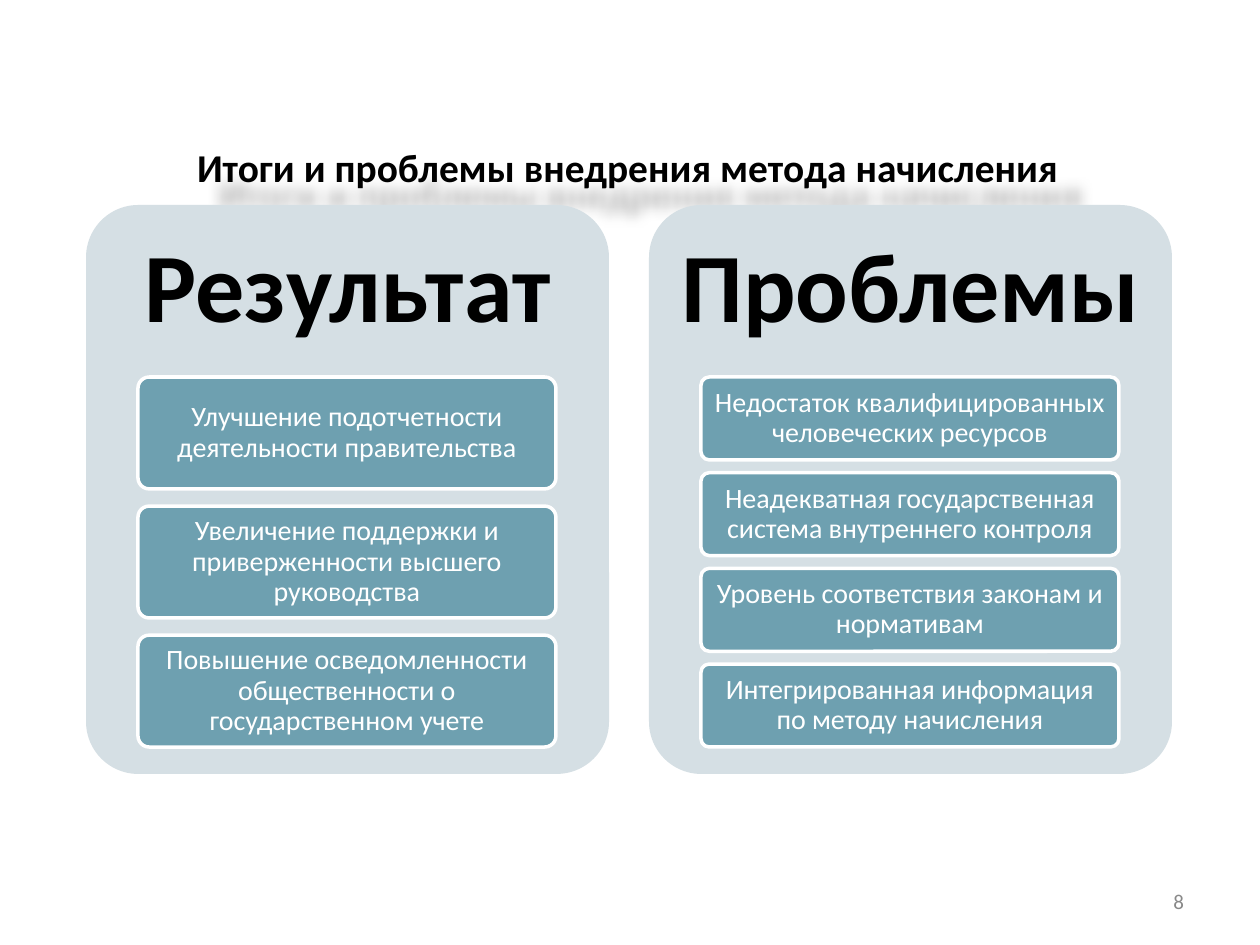
from lxml import etree
from pptx import Presentation
from pptx.dml.color import RGBColor
from pptx.enum.shapes import MSO_SHAPE
from pptx.enum.text import MSO_ANCHOR, MSO_AUTO_SIZE, PP_ALIGN
from pptx.oxml.ns import qn
from pptx.util import Emu, Pt

ROUNDED = MSO_SHAPE.ROUNDED_RECTANGLE
MIDDLE = MSO_ANCHOR.MIDDLE
CENTER, RIGHT = PP_ALIGN.CENTER, PP_ALIGN.RIGHT
NO_FIT = MSO_AUTO_SIZE.NONE

PX_PER_INCH = 126
FONT = "Calibri"
BLACK, WHITE, GREY = "000000", "FFFFFF", "898989"
PANEL_FILL, CARD_FILL = "D5DFE4", "6EA0B0"

PANEL_LEFT, PANEL_TOP, PANEL_WIDTH, PANEL_HEIGHT = 86, 205, 523, 569
PANEL_PITCH = 563
HEADING_HEIGHT, HEADING_INSET = 171, 15
CARD_INDENT, CARDS_TOP, CARD_WIDTH, CARDS_HEIGHT = 52, 377, 418, 370
GAP_RATIO = 2 / 13

TITLE = "Итоги и проблемы внедрения метода начисления"
PANELS = [
    ("Результат", [
        "Улучшение подотчетности деятельности правительства",
        "Увеличение поддержки и приверженности высшего руководства",
        "Повышение осведомленности общественности о государственном учете",
    ]),
    ("Проблемы", [
        "Недостаток квалифицированных человеческих ресурсов",
        "Неадекватная государственная система внутреннего контроля",
        "Уровень соответствия законам и нормативам",
        "Интегрированная информация по методу начисления",
    ]),
]


def px(length):
    return Emu(round(length * 914400 / PX_PER_INCH))


def rgb(hex_color):
    return RGBColor.from_string(hex_color)


def write(shape, text, size, color, bold=False, align=CENTER,
          insets=(9, 5, 9, 5), spacing=1.0):
    """Set one formatted paragraph; insets are left, top, right, bottom."""
    frame = shape.text_frame
    frame.text = text
    frame_format = {"word_wrap": True, "auto_size": NO_FIT,
                    "vertical_anchor": MIDDLE}
    for side, inset in zip(("left", "top", "right", "bottom"), insets):
        frame_format[f"margin_{side}"] = px(inset)
    for name, value in frame_format.items():
        setattr(frame, name, value)
    paragraph = frame.paragraphs[0]
    paragraph.alignment = align
    paragraph.line_spacing = spacing
    font = paragraph.runs[0].font
    for name, value in {"name": FONT, "size": Pt(size), "bold": bold}.items():
        setattr(font, name, value)
    font.color.rgb = rgb(color)


def add_soft_shadow(shape):
    properties = shape._element.spPr
    effects = etree.SubElement(properties, qn("a:effectLst"))
    shadow = etree.SubElement(effects, qn("a:outerShdw"), {
        "blurRad": str(px(14)), "dist": str(px(34)), "dir": "3000000",
        "algn": "tl", "rotWithShape": "0"})
    color = etree.SubElement(shadow, qn("a:srgbClr"), val=BLACK)
    etree.SubElement(color, qn("a:alpha"), val="30000")


def add_title(slide):
    title = slide.shapes.title
    for name, value in zip(("left", "top", "width", "height"),
                           (25, 127, 1206, 79)):
        setattr(title, name, px(value))
    write(title, TITLE, 22.5, BLACK, bold=True)
    add_soft_shadow(title)


def add_rounded(slide, left, top, width, height, fill):
    box = slide.shapes.add_shape(ROUNDED, px(left), px(top),
                                 px(width), px(height))
    box.shadow.inherit = False
    box.adjustments[0] = 0.1
    box.fill.solid()
    box.fill.fore_color.rgb = rgb(fill)
    return box


def add_panel(slide, left, heading, items):
    panel = add_rounded(slide, left, PANEL_TOP, PANEL_WIDTH, PANEL_HEIGHT,
                        PANEL_FILL)
    panel.line.fill.background()
    below_heading = PANEL_HEIGHT - HEADING_HEIGHT
    write(panel, heading, 56, BLACK, bold=True, spacing=0.9,
          insets=(0, 0, 0, below_heading))

    count = len(items)
    card_height = CARDS_HEIGHT / (count + (count - 1) * GAP_RATIO)
    for row, item in enumerate(items):
        top = CARDS_TOP + row * card_height * (1 + GAP_RATIO)
        card = add_rounded(slide, left + CARD_INDENT, top, CARD_WIDTH,
                           card_height, CARD_FILL)
        card.line.color.rgb = rgb(WHITE)
        card.line.width = Pt(2)
        write(card, item, 16, WHITE, insets=(5, 4, 5, 4), spacing=0.9)


def add_slide_number(slide, number):
    box = slide.shapes.add_textbox(px(903), px(876), px(294), px(50))
    write(box, number, 12, GREY, align=RIGHT, insets=(13, 6, 13, 6))


def main():
    prs = Presentation()
    prs.slide_width, prs.slide_height = px(1260), px(945)
    slide = prs.slides.add_slide(prs.slide_layouts[5])
    add_title(slide)
    for column, (heading, items) in enumerate(PANELS):
        add_panel(slide, PANEL_LEFT + column * PANEL_PITCH, heading, items)
    add_slide_number(slide, "8")
    prs.save("out.pptx")


if __name__ == "__main__":
    main()
